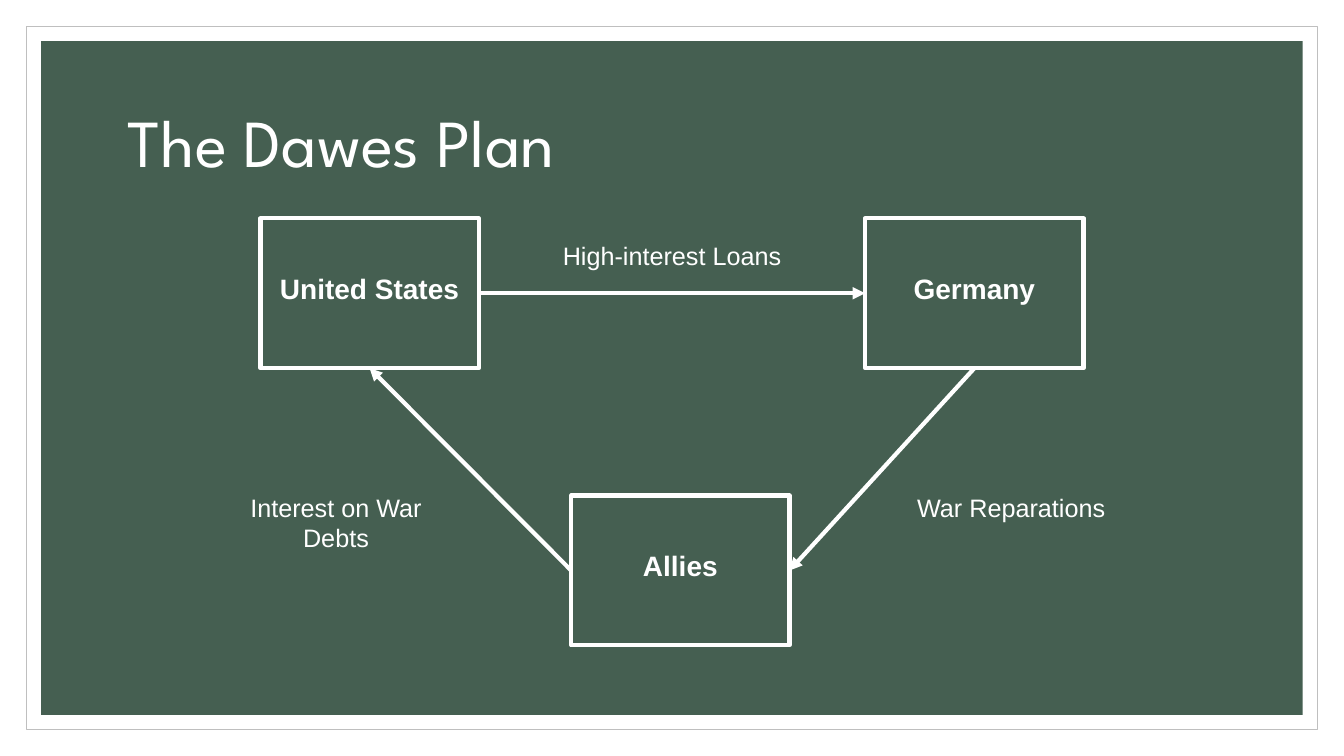
from dataclasses import dataclass

from lxml.etree import SubElement
from pptx import Presentation
from pptx.dml.color import RGBColor
from pptx.enum.shapes import MSO_CONNECTOR as Connector, MSO_SHAPE as Shape
from pptx.enum.text import MSO_ANCHOR as Anchor, MSO_AUTO_SIZE as AutoSize, PP_ALIGN as Align
from pptx.oxml.ns import qn
from pptx.util import Pt


@dataclass(frozen=True)
class Theme:
    white: str = "FFFFFF"
    green: str = "455F51"
    border: str = "BFBFBF"
    title_font: str = "League Spartan"
    body_font: str = "Arial"
    title_size: int = 48
    party_size: int = 20
    label_size: int = 18
    stroke: int = 3


TITLE = "The Dawes Plan"
PARTIES = {
    "United States": (186, 156),
    "Germany": (618, 156),
    "Allies": (408, 354),
}
PARTY_SIZE = (156, 107)
TOP, LEFT, BOTTOM, RIGHT = range(4)
PAYMENTS = [
    ("United States", RIGHT, "Germany", LEFT),
    ("Allies", LEFT, "United States", BOTTOM),
    ("Germany", BOTTOM, "Allies", RIGHT),
]
LABELS = [
    ("High-interest Loans", (342, 168, 276, 29), Align.CENTER),
    ("War Reparations", (648, 348, 156, 29), Align.LEFT),
    ("Interest on War Debts", (156, 348, 168, 50), Align.CENTER),
]
PAGE_SIZE = (960, 540)
BORDER_INSET = 18.72
PANEL_INSET = 29.4

theme = Theme()


def color(value):
    """Return the colour for a hex value."""
    return RGBColor.from_string(value)


def write(shape, text, size, font=theme.body_font, align=Align.CENTER, bold=False):
    """Put one styled line of text into a shape."""
    frame = shape.text_frame
    frame.word_wrap = True
    para = frame.paragraphs[0]
    para.alignment = align
    span = para.add_run()
    span.text = text
    span.font.name = font
    span.font.size = Pt(size)
    span.font.bold = bold
    span.font.color.rgb = color(theme.white)


def add_box(page, bounds, fill=None, line=None, width=0):
    """Draw a rectangle with optional fill and outline."""
    box = page.shapes.add_shape(Shape.RECTANGLE, *map(Pt, bounds))
    box.shadow.inherit = False
    if fill:
        box.fill.solid()
        box.fill.fore_color.rgb = color(fill)
    else:
        box.fill.background()
    if line:
        box.line.color.rgb = color(line)
        box.line.width = Pt(width)
    else:
        box.line.fill.background()
    return box


def inset_bounds(inset):
    """Return the page bounds shrunk evenly on all sides."""
    return (inset, inset, *(side - 2 * inset for side in PAGE_SIZE))


def add_title(page):
    """Place the title above the background panel."""
    title = page.shapes.title
    title.left, title.top, title.width, title.height = map(Pt, (84, 50.4, 792, 108))
    title.text_frame.auto_size = AutoSize.NONE
    title.text_frame.vertical_anchor = Anchor.MIDDLE
    write(title, TITLE, theme.title_size, theme.title_font, Align.LEFT)
    title.text_frame.paragraphs[0].line_spacing = 0.9
    title.element.getparent().append(title.element)


def add_party(page, name, corner):
    """Draw the outlined box of one party."""
    box = add_box(page, (*corner, *PARTY_SIZE), line=theme.white, width=theme.stroke)
    write(box, name, theme.party_size, bold=True)
    box.text_frame.vertical_anchor = Anchor.MIDDLE
    box.text_frame.margin_bottom = Pt(11)
    return box


def add_payment(page, payer, payer_side, payee, payee_side):
    """Join two parties with an arrow."""
    arrow = page.shapes.add_connector(Connector.STRAIGHT, 0, 0, 0, 0)
    arrow.begin_connect(payer, payer_side)
    arrow.end_connect(payee, payee_side)
    arrow.line.color.rgb = color(theme.white)
    arrow.line.width = Pt(theme.stroke)
    SubElement(arrow.line._get_or_add_ln(), qn("a:tailEnd"), type="triangle")
    SubElement(arrow.element.spPr, qn("a:effectLst"))


def main():
    """Build and save the slide."""
    deck = Presentation()
    deck.slide_width, deck.slide_height = map(Pt, PAGE_SIZE)
    page = deck.slides.add_slide(deck.slide_layouts[5])
    add_box(page, inset_bounds(BORDER_INSET), theme.white, theme.border, 0.5)
    add_box(page, inset_bounds(PANEL_INSET), theme.green)
    add_title(page)
    boxes = {name: add_party(page, name, corner) for name, corner in PARTIES.items()}
    for payer, payer_side, payee, payee_side in PAYMENTS:
        add_payment(page, boxes[payer], payer_side, boxes[payee], payee_side)
    for text, bounds, align in LABELS:
        label = page.shapes.add_textbox(*map(Pt, bounds))
        write(label, text, theme.label_size, align=align)
    deck.save("out.pptx")


if __name__ == "__main__":
    main()
